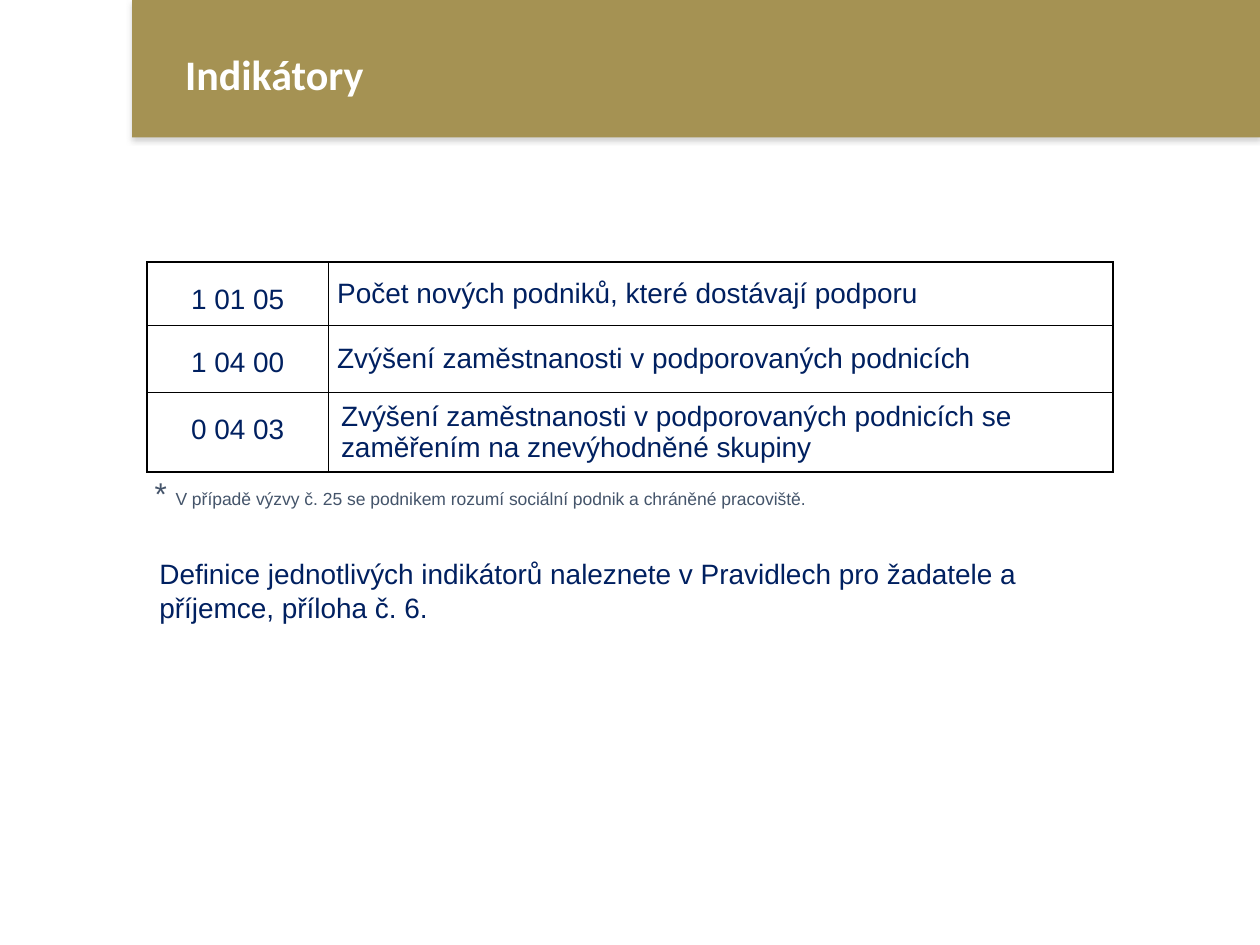
"""Build the slide of indicators with a title band, a table and two notes."""
from dataclasses import dataclass

from lxml.etree import SubElement
from pptx import Presentation
from pptx.dml.color import RGBColor
from pptx.enum.shapes import MSO_SHAPE
from pptx.enum.text import MSO_ANCHOR, PP_ALIGN
from pptx.oxml.ns import qn
from pptx.util import Pt


@dataclass(frozen=True)
class Theme:
    """Hold the colours, fonts and type sizes."""
    gold: str = "A59253"
    white: str = "FFFFFF"
    navy: str = "002060"
    slate: str = "44546A"
    black: str = "000000"
    shade: str = "808080"
    head_font: str = "Calibri"
    body_font: str = "Arial"
    title: int = 24
    star: int = 18
    body: int = 16
    note: int = 10


THEME = Theme()
COLS = (103.7, 448.3)
ROWS = (
    (33.7, "1 01 05", "Počet nových podniků, které dostávají podporu"),
    (38.3, "1 04 00", "Zvýšení zaměstnanosti v\u00a0podporovaných podnicích"),
    (42.9, "0 04 03", "Zvýšení zaměstnanosti v\u00a0podporovaných podnicích se "
                      "zaměřením na znevýhodněné skupiny"),
)


def write(frame, *runs, font=THEME.body_font, color=THEME.navy, bold=False,
          align=PP_ALIGN.LEFT, line=None, after=0, left=0, first=0):
    """Fill a text frame with one paragraph of (text, size) runs."""
    para = frame.paragraphs[0]
    para.alignment = align
    para.line_spacing = line
    para.space_after = Pt(after)
    props = para._p.get_or_add_pPr()
    props.set("marL", str(Pt(left)))
    props.set("indent", str(Pt(first)))
    for text, size in runs:
        run = para.add_run()
        run.text = text
        run.font.name = font
        run.font.size = Pt(size)
        run.font.bold = bold
        run.font.color.rgb = RGBColor.from_string(color)


def add_text(slide, box, *runs, anchor=MSO_ANCHOR.TOP, **form):
    """Add a wrapped text box."""
    frame = slide.shapes.add_textbox(*map(Pt, box)).text_frame
    frame.word_wrap = True
    frame.vertical_anchor = anchor
    write(frame, *runs, **form)


def add_band(slide, box):
    """Add the gold title band with its soft shadow."""
    band = slide.shapes.add_shape(MSO_SHAPE.RECTANGLE, *map(Pt, box))
    band.fill.solid()
    band.fill.fore_color.rgb = RGBColor.from_string(THEME.gold)
    band.line.fill.background()
    band.shadow.inherit = False
    glow = SubElement(band._element.spPr.find(qn("a:effectLst")), qn("a:outerShdw"),
                      blurRad=str(Pt(3.1)), dist=str(Pt(1.8)), dir="5400000",
                      algn="t", rotWithShape="0")
    tint = SubElement(glow, qn("a:srgbClr"), val=THEME.shade)
    SubElement(tint, qn("a:alpha"), val="35000")


def rule(cell, **sides):
    """Draw cell borders from side letters and widths."""
    props = cell._tc.get_or_add_tcPr()
    for side, width in sides.items():
        edge = SubElement(props, qn(f"a:ln{side}"), w=str(Pt(width)))
        fill = SubElement(edge, qn("a:solidFill"))
        SubElement(fill, qn("a:srgbClr"), val=THEME.black)


def add_grid(slide, left, top):
    """Add the table of codes and names."""
    high = sum(row[0] for row in ROWS)
    grid = slide.shapes.add_table(len(ROWS), len(COLS), Pt(left), Pt(top),
                                  Pt(sum(COLS)), Pt(high)).table
    grid.first_row = grid.horz_banding = False
    for col, width in zip(grid.columns, COLS):
        col.width = Pt(width)
    last = len(ROWS) - 1
    for i, (height, code, name) in enumerate(ROWS):
        grid.rows[i].height = Pt(height)
        key, label = grid.cell(i, 0), grid.cell(i, 1)
        for cell in (key, label):
            rule(cell, L=1, R=1, T=0.5 if i else 1, B=0.5 if i < last else 1)
            cell.fill.background()
        write(key.text_frame, (code, THEME.body), align=PP_ALIGN.JUSTIFY,
              line=1.5, first=18)
        label.vertical_anchor = MSO_ANCHOR.MIDDLE
        if i < last:
            label.margin_left = label.margin_right = Pt(5)
            label.margin_top = label.margin_bottom = Pt(0)
        write(label.text_frame, (name, THEME.body),
              align=PP_ALIGN.LEFT if i else PP_ALIGN.JUSTIFY)


def main():
    """Build and save the slide."""
    deck = Presentation()
    deck.slide_width, deck.slide_height = Pt(720), Pt(540)
    slide = deck.slides.add_slide(deck.slide_layouts[6])
    add_band(slide, (75.5, 0, 644.5, 78.5))
    add_text(slide, (98.8, 4.3, 600.5, 79.2), ("Indikátory", THEME.title),
             anchor=MSO_ANCHOR.MIDDLE, font=THEME.head_font,
             color=THEME.white, bold=True, line=0.9)
    add_grid(slide, 84, 149.8)
    add_text(slide, (54, 267.1, 512.6, 28.8), ("* ", THEME.star),
             ("V případě výzvy č. 25 se podnikem rozumí sociální podnik "
              "a chráněné pracoviště.", THEME.note),
             color=THEME.slate, align=PP_ALIGN.JUSTIFY, after=6, left=9.2, first=18)
    add_text(slide, (84, 314.6, 552, 46),
             ("Definice jednotlivých indikátorů naleznete v Pravidlech "
              "pro žadatele a příjemce, příloha č. 6.", THEME.body))
    deck.save("out.pptx")


if __name__ == "__main__":
    main()
